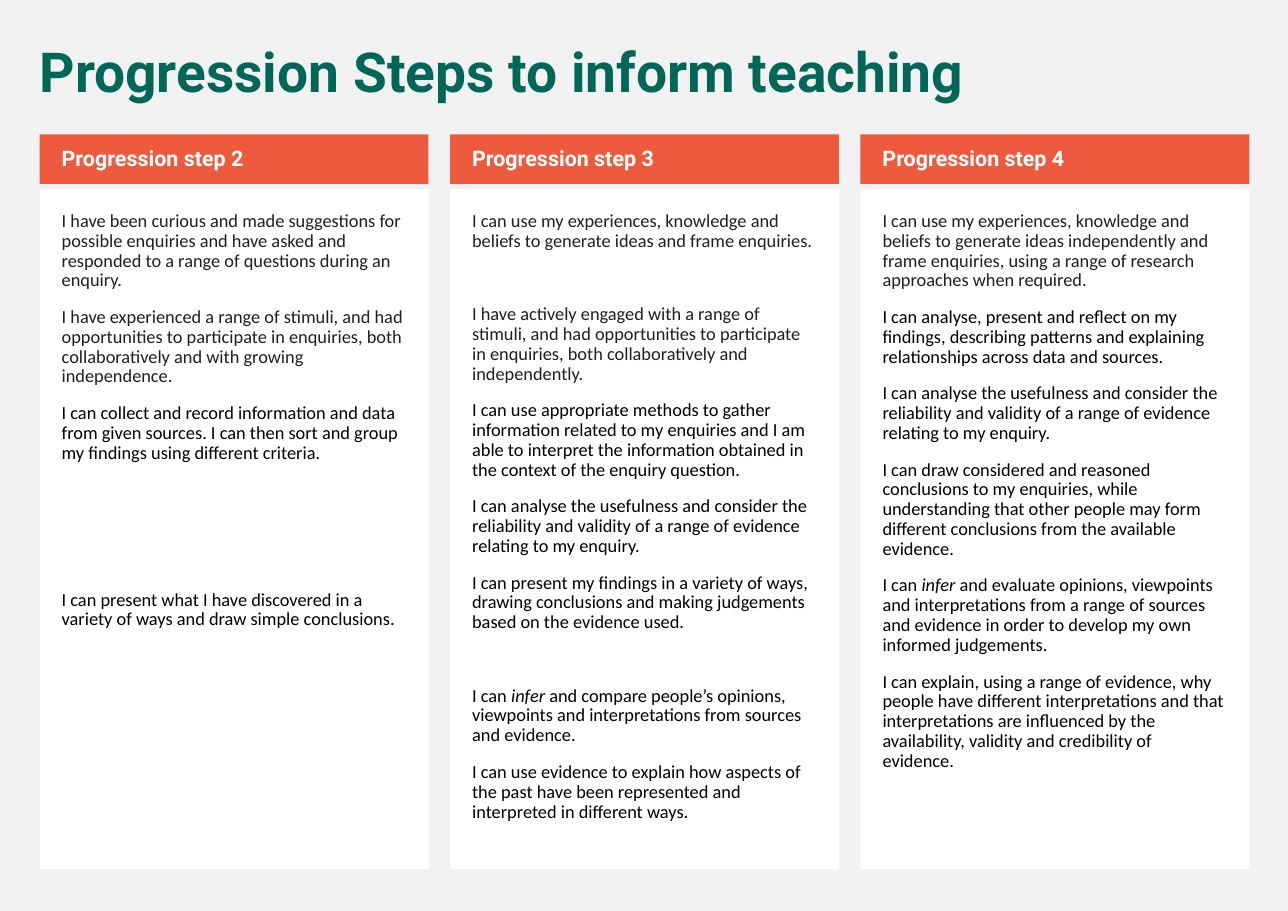
from lxml import etree
from pptx import Presentation
from pptx import util as u
from pptx.dml import color
from pptx.enum import shapes, text
from pptx.oxml import ns

# Layout in points
WIDTH, HEIGHT = 841.68, 595.44
LEFT, PITCH, COLUMN = 25.92, 268.2, 254.16
HEADING_TOP, HEADING_HEIGHT = 87.84, 32.4
STATEMENTS_TOP, STATEMENTS_HEIGHT = 123.84, 444.24
SPACE, SKIPPED_ROW = 11, 24

# Heading, number of grey statements, rows skipped before a statement, statements
STEPS = [
    ("Progression step 2", 2, {3: 3}, [
        "I have been curious and made suggestions for possible enquiries and have asked and "
        "responded to a range of questions during an enquiry.",
        "I have experienced a range of stimuli, and had opportunities to participate in "
        "enquiries, both collaboratively and with growing independence.",
        "I can collect and record information and data from given sources. I can then sort "
        "and group my findings using different criteria.",
        "I can present what I have discovered in a variety of ways and draw simple conclusions.",
    ]),
    ("Progression step 3", 2, {1: 1, 5: 1}, [
        "I can use my experiences, knowledge and beliefs to generate ideas and frame enquiries.",
        "I have actively engaged with a range of stimuli, and had opportunities to participate "
        "in enquiries, both collaboratively and independently.",
        "I can use appropriate methods to gather information related to my enquiries and I am "
        "able to interpret the information obtained in the context of the enquiry question.",
        "I can analyse the usefulness and consider the reliability and validity of a range of "
        "evidence relating to my enquiry.",
        "I can present my findings in a variety of ways, drawing conclusions and making "
        "judgements based on the evidence used.",
        "I can infer and compare people’s opinions, viewpoints and interpretations from "
        "sources and evidence.",
        "I can use evidence to explain how aspects of the past have been represented and "
        "interpreted in different ways.",
    ]),
    ("Progression step 4", 1, {}, [
        "I can use my experiences, knowledge and beliefs to generate ideas independently and "
        "frame enquiries, using a range of research approaches when required.",
        "I can analyse, present and reflect on my findings, describing patterns and explaining "
        "relationships across data and sources.",
        "I can analyse the usefulness and consider the reliability and validity of a range of "
        "evidence relating to my enquiry.",
        "I can draw considered and reasoned conclusions to my enquiries, while understanding "
        "that other people may form different conclusions from the available evidence.",
        "I can infer and evaluate opinions, viewpoints and interpretations from a range of "
        "sources and evidence in order to develop my own informed judgements.",
        "I can explain, using a range of evidence, why people have different interpretations "
        "and that interpretations are influenced by the availability, validity and credibility "
        "of evidence.",
    ]),
]


def rgb(value):
    return color.RGBColor.from_string(value)


class StepsSlide:
    GREEN, ORANGE, WHITE = "006758", "ED5A3E", "FFFFFF"
    GREY, BLACK, BACKGROUND = "1F1F1F", "000000", "F2F2F2"
    DISPLAY, BODY = "Roboto", "Calibri"

    def __init__(self, slide):
        self.slide = slide
        self.paint(slide.background, self.BACKGROUND)

    def paint(self, target, value):
        target.fill.solid()
        target.fill.fore_color.rgb = rgb(value)

    def place(self, shape, left, top, width, height):
        shape.left, shape.top = u.Pt(left), u.Pt(top)
        shape.width, shape.height = u.Pt(width), u.Pt(height)

    def frame(self, shape, anchor, insets):
        frame = shape.text_frame
        frame.word_wrap = True
        frame.auto_size = text.MSO_AUTO_SIZE.NONE
        frame.vertical_anchor = anchor
        (frame.margin_left, frame.margin_top,
         frame.margin_right, frame.margin_bottom) = map(u.Pt, insets)
        return frame

    def format(self, paragraph, font, size, value, bold=False, space=SPACE):
        paragraph.alignment = text.PP_ALIGN.LEFT
        paragraph.line_spacing = 0.9
        paragraph.space_before = u.Pt(space)
        for run in paragraph.runs:
            run.font.name, run.font.size = font, u.Pt(size)
            run.font.bold = bold
            run.font.color.rgb = rgb(value)

    def title(self, wording):
        title = self.slide.shapes.title
        self.place(title, 18.72, 25.92, 797.76, 46.8)
        frame = self.frame(title, text.MSO_ANCHOR.TOP, (7.2, 3.6, 7.2, 3.6))
        frame.text = wording
        self.format(frame.paragraphs[0], self.DISPLAY, 36, self.GREEN, bold=True)

    def heading(self, left, wording):
        bar = self.slide.shapes.add_shape(shapes.MSO_SHAPE.RECTANGLE, 0, 0, 0, 0)
        self.place(bar, left, HEADING_TOP, COLUMN, HEADING_HEIGHT)
        self.paint(bar, self.ORANGE)
        bar.line.fill.background()
        bar.shadow.inherit = False
        frame = self.frame(bar, text.MSO_ANCHOR.MIDDLE, (14.4, 3.6, 7.2, 3.6))
        frame.text = wording
        self.format(frame.paragraphs[0], self.DISPLAY, 14, self.WHITE, bold=True)

    def statements(self, panel, left, wordings, grey_count, skipped):
        self.place(panel, left, STATEMENTS_TOP, COLUMN, STATEMENTS_HEIGHT)
        self.paint(panel, self.WHITE)
        frame = self.frame(panel, text.MSO_ANCHOR.TOP, (14.4,) * 4)
        frame.text = "\n".join(wordings)
        for index, (paragraph, wording) in enumerate(zip(frame.paragraphs, wordings)):
            before, infer, after = wording.partition("infer")
            if infer:
                paragraph.text = before
                for part in (infer, after):
                    run = paragraph.add_run()
                    run.text = part
                    run.font.italic = part == infer
            self.format(paragraph, self.BODY, 12,
                        self.GREY if index < grey_count else self.BLACK,
                        space=SPACE + SKIPPED_ROW * skipped.get(index, 0))
            self.remove_bullet(paragraph)

    def remove_bullet(self, paragraph):
        properties = paragraph._p.get_or_add_pPr()
        properties.set("marL", "0")
        properties.set("indent", "0")
        etree.SubElement(properties, ns.qn("a:buNone"))


def main():
    presentation = Presentation()
    presentation.slide_width, presentation.slide_height = u.Pt(WIDTH), u.Pt(HEIGHT)
    comparison = presentation.slide_layouts[4]
    steps = StepsSlide(presentation.slides.add_slide(comparison))

    # Title
    steps.title("Progression Steps to inform teaching")

    # One column for each progression step
    _, *panels, spare = list(steps.slide.placeholders)
    for column, (panel, step) in enumerate(zip(panels, STEPS)):
        heading, grey_count, skipped, wordings = step
        left = LEFT + column * PITCH
        steps.statements(panel, left, wordings, grey_count, skipped)
        steps.heading(left, heading)

    # The layout has one panel more than there are steps
    spare.element.getparent().remove(spare.element)
    presentation.save("out.pptx")


if __name__ == "__main__":
    main()
